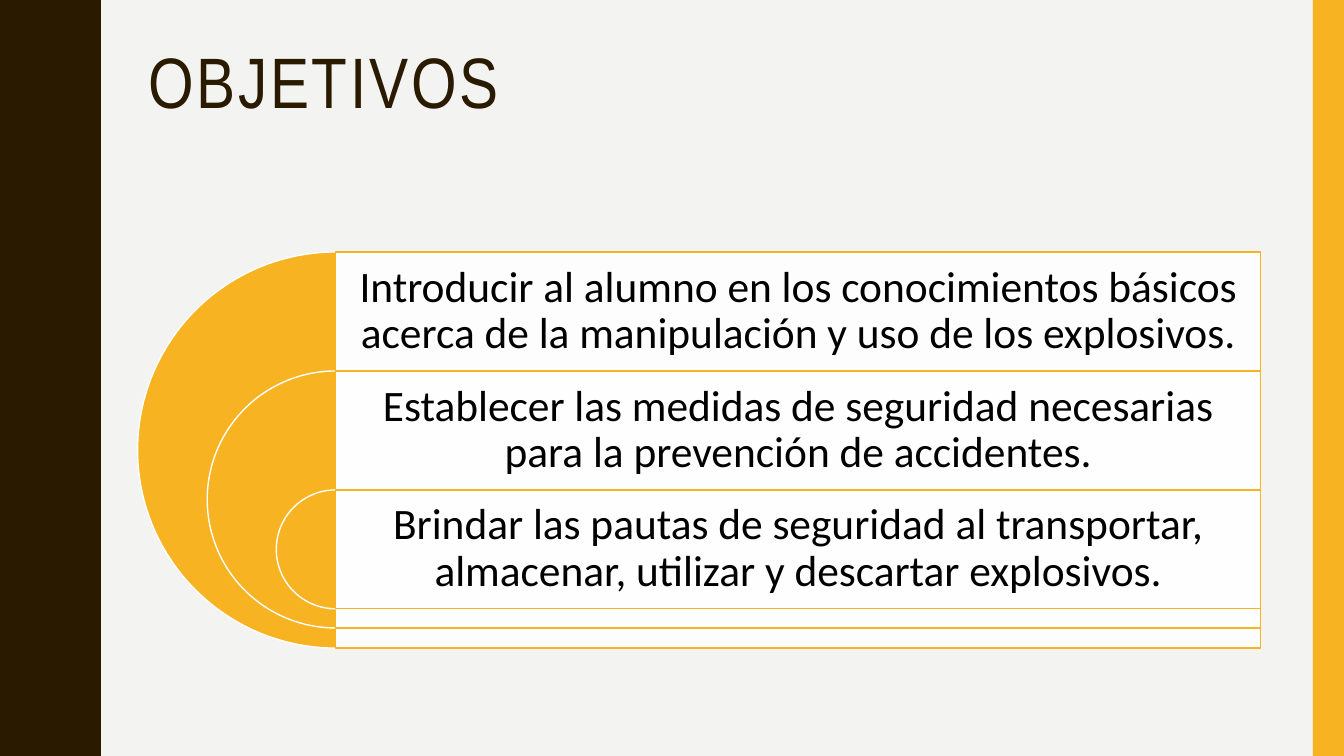
from dataclasses import dataclass

import pptx
import pptx.dml.color
import pptx.enum.shapes
import pptx.enum.text
import pptx.oxml.ns
import pptx.util
from lxml import etree

Inches = pptx.util.Inches
Pt = pptx.util.Pt
SHAPE = pptx.enum.shapes.MSO_SHAPE
ALIGN = pptx.enum.text.PP_ALIGN
ANCHOR = pptx.enum.text.MSO_ANCHOR

GOLD, BROWN, WHITE = "F8B323", "2A1A00", "FFFFFF"
PAPER, BLACK = "F3F3F2", "000000"
AXIS, TOP, WIDTH, STEP = 3.33, 2.5, 9.17, 1.18


@dataclass
class Goal:
    text: str
    size: float  # diameter of the half disc and height of the panel


GOALS = [
    Goal("Introducir al alumno en los conocimientos básicos acerca de la "
         "manipulación y uso de los explosivos.", 3.93),
    Goal("Establecer las medidas de seguridad necesarias para la prevención "
         "de accidentes.", 2.55),
    Goal("Brindar las pautas de seguridad al transportar, almacenar, utilizar "
         "y descartar explosivos.", 1.18),
]

# First half of one wave of the left edge, as x, y
CURVE = [(0.78, 0), (0.78, 0.07), (0.79, 0.14), (0.8, 0.2), (0.81, 0.25),
         (0.83, 0.29), (0.85, 0.33), (0.87, 0.38), (0.89, 0.42), (0.91, 0.46),
         (0.93, 0.5), (0.95, 0.55), (0.96, 0.61), (0.97, 0.68), (0.97, 0.75)]
PERIOD, WAVES = 1.5, 5


def color(code: str) -> pptx.dml.color.RGBColor:
    return pptx.dml.color.RGBColor.from_string(code)


def paint(shape, fill: str, line: str = "") -> None:
    shape.shadow.inherit = False
    shape.fill.solid()
    shape.fill.fore_color.rgb = color(fill)
    if line:
        shape.line.color.rgb = color(line)
        shape.line.width = Pt(1)
    else:
        shape.line.fill.background()


def add_shape(slide, kind, left: float, top: float, width: float,
              height: float, fill: str, line: str = ""):
    shape = slide.shapes.add_shape(
        kind, Inches(left), Inches(top), Inches(width), Inches(height))
    paint(shape, fill, line)
    return shape


def add_text(slide, left: float, top: float, width: float, height: float,
             text: str, font: str, size: float, tint: str):
    box = slide.shapes.add_textbox(
        Inches(left), Inches(top), Inches(width), Inches(height))
    box.text_frame.word_wrap = True
    line = box.text_frame.paragraphs[0]
    line.text = text
    line.line_spacing = 0.9
    line.font.name = font
    line.font.size = Pt(size)
    line.font.color.rgb = color(tint)
    return box.text_frame


def add_wave(slide) -> None:
    cycle = CURVE + [(x, PERIOD - y) for x, y in CURVE[-2::-1]]
    edge = [(x, y + n * PERIOD) for n in range(WAVES) for x, y in cycle]
    form = slide.shapes.build_freeform(0, 0, scale=Inches(1))
    form.add_line_segments(edge + [(0, WAVES * PERIOD)], close=True)
    paint(form.convert_to_shape(), BROWN)


def add_goal(slide, goal: Goal, top: float) -> None:
    # Half disc
    disc = add_shape(slide, SHAPE.PIE, AXIS - goal.size / 2, top,
                     goal.size, goal.size, GOLD, WHITE)
    disc.adjustments[0] = 54
    disc.adjustments[1] = 162

    # Translucent panel
    panel = add_shape(slide, SHAPE.RECTANGLE, AXIS, top, WIDTH, goal.size,
                      WHITE, GOLD)
    qn = pptx.oxml.ns.qn
    tone = panel.fill._xPr.find(qn("a:solidFill")).find(qn("a:srgbClr"))
    etree.SubElement(tone, qn("a:alpha"), val="90000")

    # Wording
    frame = add_text(slide, AXIS, top, WIDTH, STEP, goal.text,
                     "Calibri", 31, BLACK)
    frame.margin_left = frame.margin_right = Inches(0.13)
    frame.margin_top = frame.margin_bottom = Inches(0.13)
    frame.vertical_anchor = ANCHOR.MIDDLE
    frame.paragraphs[0].alignment = ALIGN.CENTER


def main() -> None:
    deck = pptx.Presentation()
    deck.slide_width, deck.slide_height = Inches(13.33), Inches(7.5)
    slide = deck.slides.add_slide(deck.slide_layouts[6])

    # Background and side bands
    slide.background.fill.solid()
    slide.background.fill.fore_color.rgb = color(PAPER)
    add_wave(slide)
    add_shape(slide, SHAPE.RECTANGLE, 13.02, 0, 0.31, 7.5, GOLD)

    # Title
    title = add_text(slide, 1.37, 0.42, 11.13, 1.63, "OBJETIVOS",
                     "Arial Narrow", 51, BROWN)
    title.paragraphs[0].runs[0].font._element.set("spc", "200")

    # Goals
    for row, goal in enumerate(GOALS):
        add_goal(slide, goal, TOP + row * STEP)

    deck.save("out.pptx")


if __name__ == "__main__":
    main()
